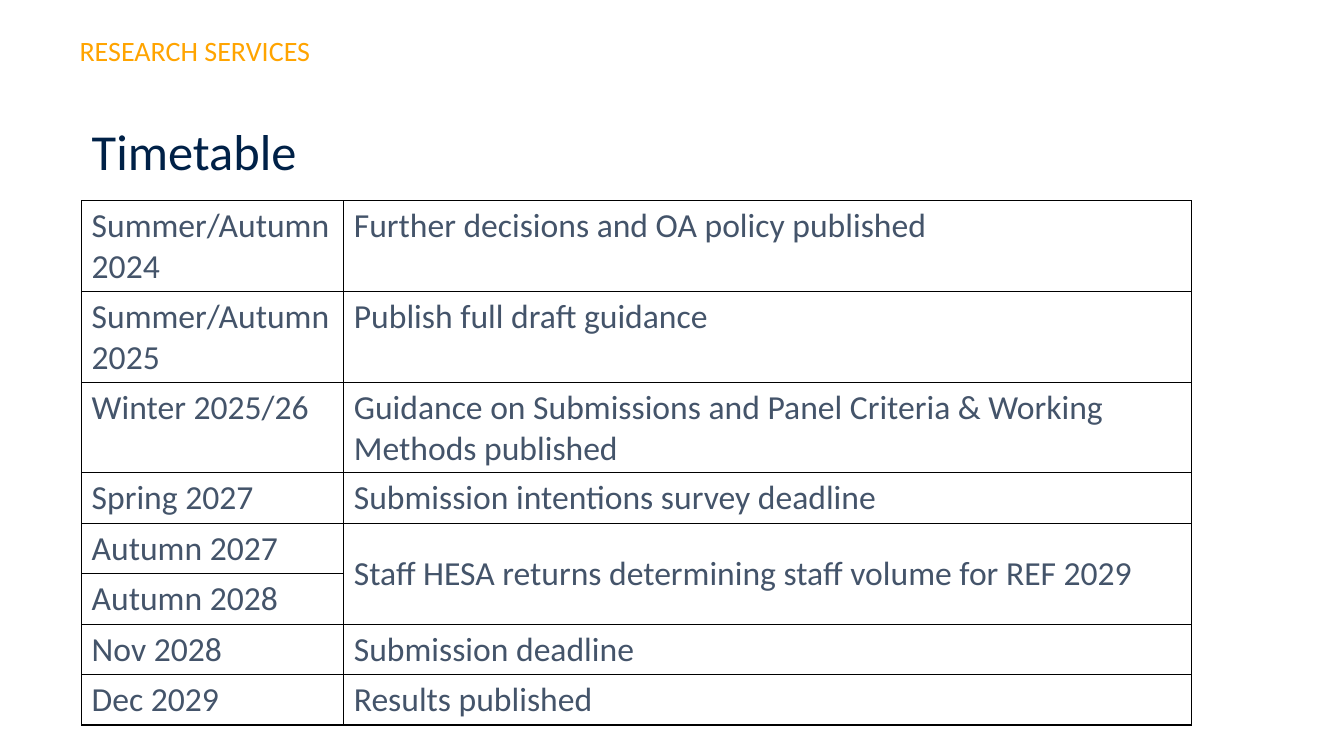
from dataclasses import dataclass

from lxml.etree import SubElement
from pptx import Presentation
from pptx.dml.color import RGBColor
from pptx.enum.text import MSO_ANCHOR, MSO_AUTO_SIZE, PP_ALIGN
from pptx.oxml.ns import qn
from pptx.slide import Slide
from pptx.table import _Cell
from pptx.text.text import TextFrame
from pptx.util import Inches, Pt


@dataclass(frozen=True)
class TextStyle:
    size: int
    color: str


@dataclass(frozen=True)
class Theme:
    font: str = "Calibri"
    department: TextStyle = TextStyle(20, "FFA400")
    title: TextStyle = TextStyle(36, "002147")
    entry: TextStyle = TextStyle(24, "44546A")
    border_color: str = "000000"
    border_width: int = 1


@dataclass(frozen=True)
class Milestone:
    date: str
    event: str
    rows: int = 1


THEME = Theme()
MILESTONES = [
    Milestone("Summer/Autumn 2024", "Further decisions and OA policy published"),
    Milestone("Summer/Autumn 2025", "Publish full draft guidance"),
    Milestone("Winter 2025/26", "Guidance on Submissions and Panel Criteria & Working Methods published"),
    Milestone("Spring 2027", "Submission intentions survey deadline"),
    Milestone("Autumn 2027", "Staff HESA returns determining staff volume for REF 2029", rows=2),
    Milestone("Autumn 2028", ""),
    Milestone("Nov 2028", "Submission deadline"),
    Milestone("Dec 2029", "Results published"),
]
LEFT, WIDTH = Inches(0.81), Inches(11.01)
DATE_WIDTH = Inches(2.6)
ROW_HEIGHT = Inches(0.41)
TIMETABLE_HEIGHT = Inches(5.2)


def write(frame: TextFrame, text: str, style: TextStyle) -> None:
    run = frame.paragraphs[0].add_run()
    run.text = text
    run.font.name = THEME.font
    run.font.size = Pt(style.size)
    run.font.color.rgb = RGBColor.from_string(style.color)


def outline(cell: _Cell) -> None:
    properties = cell._tc.get_or_add_tcPr()
    for side in ("a:lnL", "a:lnR", "a:lnT", "a:lnB"):
        line = SubElement(properties, qn(side), w=str(Pt(THEME.border_width)))
        fill = SubElement(line, qn("a:solidFill"))
        SubElement(fill, qn("a:srgbClr"), val=THEME.border_color)
    cell.fill.background()


def add_department(slide: Slide) -> None:
    department = slide.shapes.add_textbox(Inches(0.69), Inches(0.28), Inches(7.38), Inches(0.44))
    department.text_frame.word_wrap = True
    write(department.text_frame, "RESEARCH SERVICES", THEME.department)


def add_title(slide: Slide) -> None:
    title = slide.shapes.title
    title.left, title.top, title.width, title.height = LEFT, Inches(1.21), WIDTH, Inches(1.16)
    frame = title.text_frame
    frame.auto_size = MSO_AUTO_SIZE.NONE
    frame.vertical_anchor = MSO_ANCHOR.TOP
    frame.paragraphs[0].alignment = PP_ALIGN.LEFT
    frame.paragraphs[0].line_spacing = 0.9
    write(frame, "Timetable", THEME.title)


def add_timetable(slide: Slide) -> None:
    holder = slide.shapes.add_table(len(MILESTONES), 2, LEFT, Inches(1.99), WIDTH, TIMETABLE_HEIGHT)
    timetable = holder.table
    timetable.first_row = timetable.horz_banding = False
    timetable.columns[0].width = DATE_WIDTH
    timetable.columns[1].width = WIDTH - DATE_WIDTH
    for index, milestone in enumerate(MILESTONES):
        timetable.rows[index].height = ROW_HEIGHT
        for column, text in enumerate((milestone.date, milestone.event)):
            cell = timetable.cell(index, column)
            outline(cell)
            if text:
                write(cell.text_frame, text, THEME.entry)
        if milestone.rows > 1:
            event = timetable.cell(index, 1)
            event.merge(timetable.cell(index + milestone.rows - 1, 1))
            event.vertical_anchor = MSO_ANCHOR.MIDDLE
    holder.height = TIMETABLE_HEIGHT


def main() -> None:
    presentation = Presentation()
    presentation.slide_width, presentation.slide_height = Inches(13.33), Inches(7.5)
    slide = presentation.slides.add_slide(presentation.slide_layouts[5])
    add_department(slide)
    add_title(slide)
    add_timetable(slide)
    presentation.save("out.pptx")


if __name__ == "__main__":
    main()
